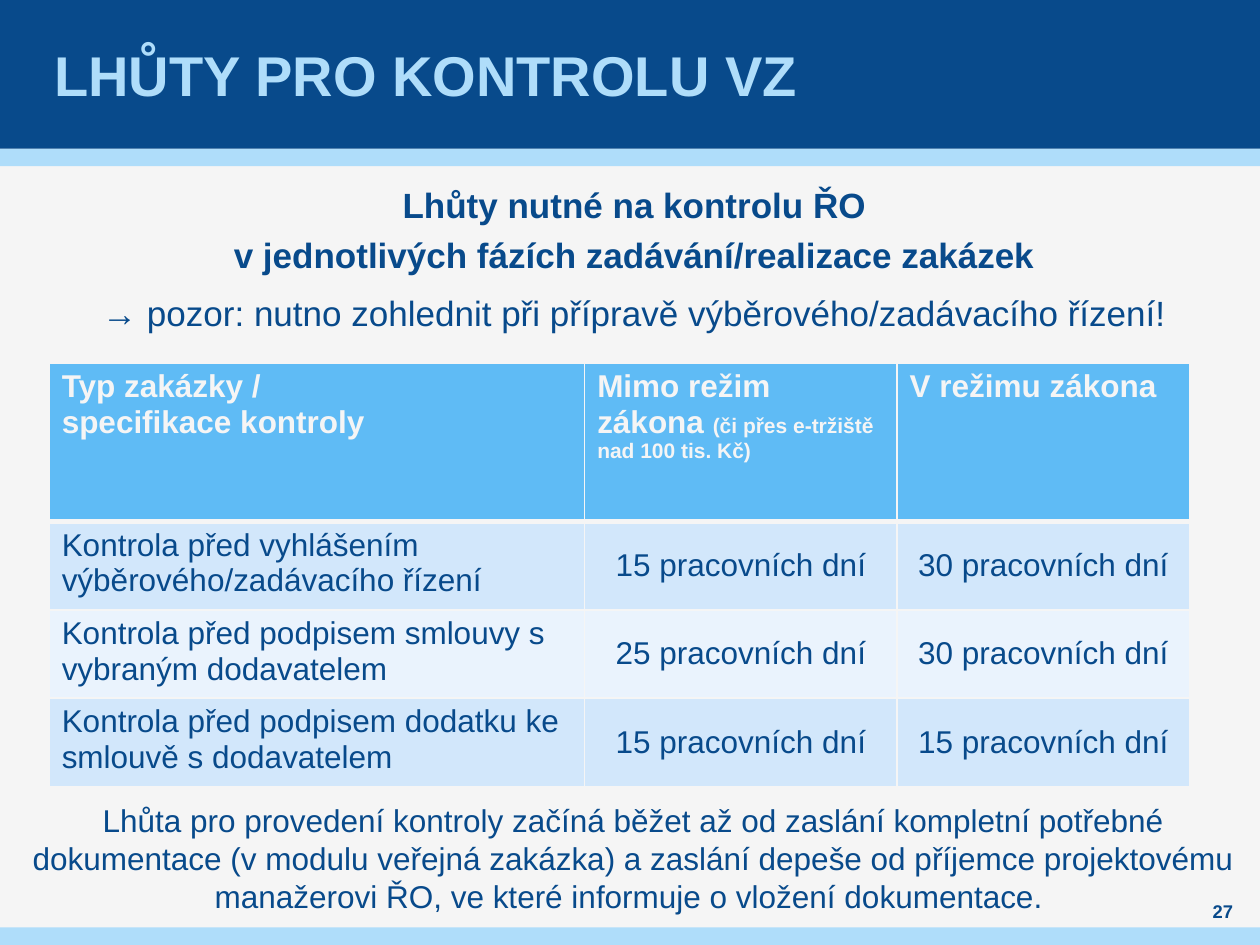
from lxml.etree import SubElement
from pptx import Presentation
from pptx.dml.color import RGBColor
from pptx.enum.shapes import MSO_SHAPE
from pptx.enum.text import MSO_ANCHOR, PP_ALIGN
from pptx.oxml import parse_xml
from pptx.oxml.ns import nsdecls
from pptx.util import Inches, Pt

NAVY = RGBColor(0x08, 0x4A, 0x8B)
SKY = RGBColor(0xAF, 0xDD, 0xFA)
BLUE = RGBColor(0x5F, 0xBB, 0xF5)
PALE = RGBColor(0xD2, 0xE7, 0xFB)
PALER = RGBColor(0xEA, 0xF3, 0xFD)
WHITE = RGBColor(0xF5, 0xF5, 0xF5)


def set_font(paragraph, size, color, bold=False):
    paragraph.font.name = "Arial"
    paragraph.font.size = Pt(size)
    paragraph.font.bold = bold
    paragraph.font.color.rgb = color


def add_text(left, top, width, height, paragraphs, size, color, bold=False,
             align=PP_ALIGN.CENTER, anchor=MSO_ANCHOR.TOP, insets=(0, 0)):
    shape = slide.shapes.add_textbox(Inches(left), Inches(top), Inches(width), Inches(height))
    frame = shape.text_frame
    frame.word_wrap = True
    frame.vertical_anchor = anchor
    frame.margin_left = frame.margin_right = Inches(insets[0])
    frame.margin_top = frame.margin_bottom = Inches(insets[1])
    for index, text in enumerate(paragraphs):
        paragraph = frame.add_paragraph() if index else frame.paragraphs[0]
        paragraph.text = text
        paragraph.alignment = align
        set_font(paragraph, size, color, bold)
    return frame


presentation = Presentation()
presentation.slide_width = Inches(10)
presentation.slide_height = Inches(7.5)
slide = presentation.slides.add_slide(presentation.slide_layouts[6])
slide.background.fill.solid()
slide.background.fill.fore_color.rgb = WHITE

for top, height, color in [(1.18, 0.14, SKY), (0, 1.18, NAVY), (7.36, 0.14, SKY)]:
    band = slide.shapes.add_shape(MSO_SHAPE.RECTANGLE, 0, Inches(top), Inches(10), Inches(height))
    band.shadow.inherit = False
    band.fill.solid()
    band.fill.fore_color.rgb = color
    band.line.fill.background()

add_text(0.39, 0, 9.21, 1.18, ["LHŮTY PRO KONTROLU VZ"], 32, SKY, True,
         PP_ALIGN.LEFT, MSO_ANCHOR.MIDDLE, (0.04, 0))

intro = add_text(0.35, 1.39, 9.37, 1.4, [
    "Lhůty nutné na kontrolu ŘO\vv jednotlivých fázích zadávání/realizace zakázek",
    "→ pozor: nutno zohlednit při přípravě výběrového/zadávacího řízení!",
], 20, NAVY, True)
for paragraph, line, gap in zip(intro.paragraphs, (28.8, 24), (6, 3)):
    paragraph.line_spacing = Pt(line)
    paragraph.space_before = paragraph.space_after = Pt(gap)
intro.paragraphs[1].font.bold = False

add_text(9.45, 7.13, 0.51, 0.2, ["27"], 10.5, NAVY, True, anchor=MSO_ANCHOR.MIDDLE)

rows = [
    ("Typ zakázky /\nspecifikace kontroly", "Mimo režim zákona ", "V režimu zákona"),
    ("Kontrola před vyhlášením výběrového/zadávacího řízení",
     "15 pracovních dní", "30 pracovních dní"),
    ("Kontrola před podpisem smlouvy s vybraným dodavatelem",
     "25 pracovních dní", "30 pracovních dní"),
    ("Kontrola před podpisem dodatku ke smlouvě s dodavatelem",
     "15 pracovních dní", "15 pracovních dní"),
]
table = slide.shapes.add_table(4, 3, Inches(0.39), Inches(2.88), Inches(9.05), Inches(3.24)).table
for column, width in zip(table.columns, (4.25, 2.48, 2.32)):
    column.width = Inches(width)
for row, height in zip(table.rows, (1.26, 0.66, 0.66, 0.66)):
    row.height = Inches(height)

for row_index, texts in enumerate(rows):
    header = row_index == 0
    for column_index, text in enumerate(texts):
        cell = table.cell(row_index, column_index)
        cell.text = text
        cell.fill.solid()
        cell.fill.fore_color.rgb = BLUE if header else (PALER, PALE)[row_index % 2]
        for paragraph in cell.text_frame.paragraphs:
            set_font(paragraph, 18, WHITE if header else NAVY, header)
            if not header and column_index:
                paragraph.alignment = PP_ALIGN.CENTER
                paragraph.space_before = paragraph.space_after = Pt(3)
        if not header and column_index:
            cell.vertical_anchor = MSO_ANCHOR.MIDDLE
            cell.margin_left = cell.margin_right = Inches(0.07)
            cell.margin_top = cell.margin_bottom = 0
        properties = cell._tc.get_or_add_tcPr()
        for position, side in enumerate("LRTB"):
            thick = (row_index, side) in [(0, "B"), (1, "T")]
            border = parse_xml(f'<a:ln{side} {nsdecls("a")} w="{Pt(3 if thick else 1)}">'
                               f'<a:solidFill><a:srgbClr val="{WHITE}"/></a:solidFill></a:ln{side}>')
            properties.insert(position, border)

note = table.cell(0, 1).text_frame.paragraphs[0].add_run()
note.text = "(či přes e-tržiště nad 100 tis. Kč)"
note.font.size = Pt(12)

add_text(0.09, 6.31, 9.87, 1.01, [
    "Lhůta pro provedení kontroly začíná běžet až od zaslání kompletní potřebné dokumentace "
    "(v modulu veřejná zakázka) a zaslání depeše od příjemce projektovému manažerovi ŘO, "
    "ve které informuje o vložení dokumentace. ",
], 18, NAVY, insets=(0.1, 0.05))

presentation.save("out.pptx")
